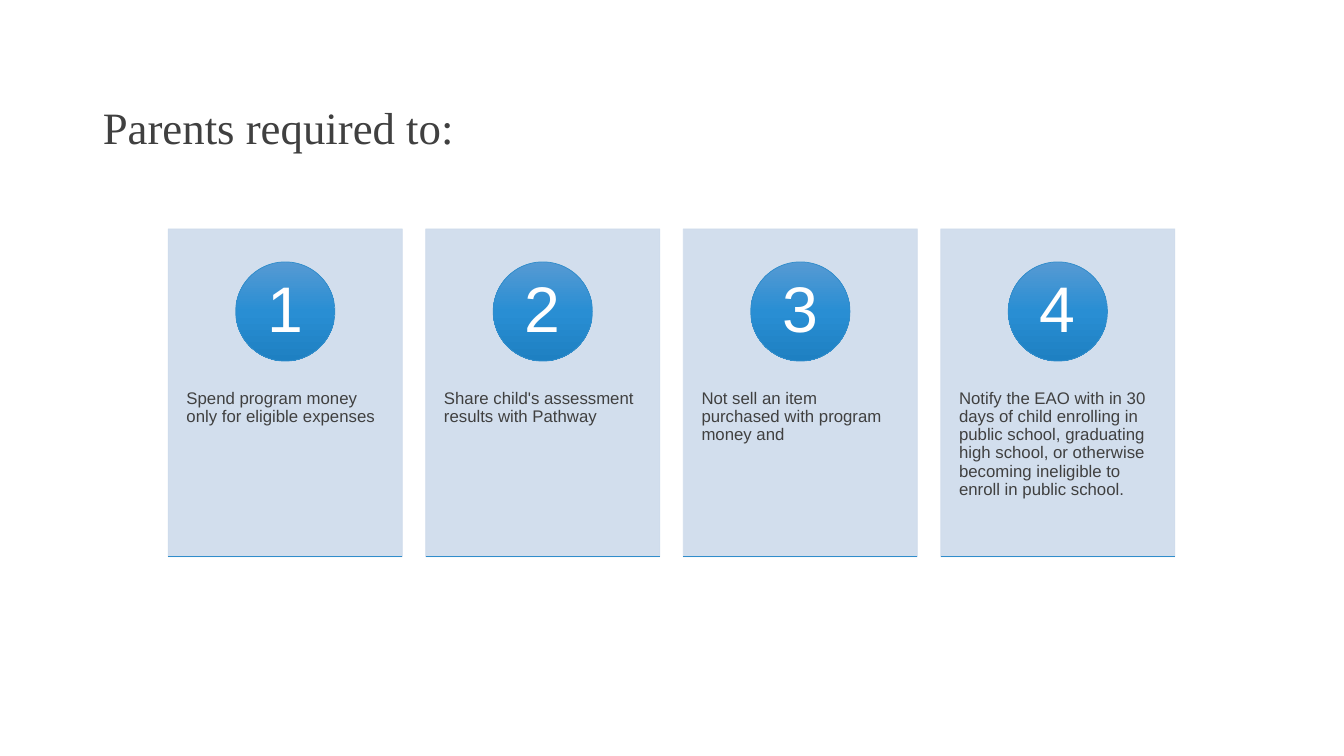
import copy

import pptx
import pptx.dml.color
import pptx.enum.shapes
import pptx.enum.text
import pptx.oxml.ns
import pptx.util
from lxml import etree
from pptx.util import Cm

COLOURS = {
    "text": "404040",
    "card": "CEDBEC",
    "number": "FFFFFF",
    "accent": "318DCB",
    "gradient top": "569AD3",
    "gradient middle": "298ED3",
    "gradient bottom": "1E80C2",
}
DUTIES = [
    "Spend program money only for eligible expenses",
    "Share child's assessment results with Pathway",
    "Not sell an item purchased with program money and",
    "Notify the EAO with in 30 days of child enrolling in public school, "
    "graduating high school, or otherwise becoming ineligible to enroll in public school.",
]
CARD_LEFT, CARD_TOP, CARD_WIDTH, CARD_HEIGHT = 4.24, 5.77, 5.9, 8.26
CARD_STEP = 6.49
CIRCLE_TOP, CIRCLE_SIZE = 6.6, 2.5


class DutySlide:
    """Holds the style and the current slide and adds each kind of element."""

    def __init__(self, presentation):
        self.slide = presentation.slides.add_slide(presentation.slide_layouts[5])

    def colour(self, name):
        return pptx.dml.color.RGBColor.from_string(COLOURS[name])

    def set_text(self, shape, text, font, size, colour, align, anchor, insets):
        frame = shape.text_frame
        frame.text = text
        frame.word_wrap = True
        frame.auto_size = pptx.enum.text.MSO_AUTO_SIZE.NONE
        frame.vertical_anchor = anchor
        frame.margin_left = frame.margin_right = Cm(insets[0])
        frame.margin_top, frame.margin_bottom = Cm(insets[1]), Cm(insets[2])
        paragraph = frame.paragraphs[0]
        paragraph.alignment = align
        paragraph.line_spacing = 0.9
        paragraph.font.name = font
        paragraph.font.size = pptx.util.Pt(size)
        paragraph.font.color.rgb = self.colour(colour)

    def title(self, text):
        title = self.slide.shapes.title
        title.left, title.top, title.width, title.height = Cm(2.34), Cm(1.02), Cm(27.3), Cm(3)
        self.set_text(title, text, "Times New Roman", 32, "text", pptx.enum.text.PP_ALIGN.LEFT,
                      pptx.enum.text.MSO_ANCHOR.BOTTOM, (0.25, 0.13, 0.13))

    def shape(self, kind, left, top, width, height, line):
        shape = self.slide.shapes.add_shape(kind, Cm(left), Cm(top), Cm(width), Cm(height))
        shape.shadow.inherit = False
        shape.line.color.rgb = self.colour(line)
        shape.line.width = pptx.util.Pt(0.5)
        return shape

    def card(self, left, text):
        card = self.shape(pptx.enum.shapes.MSO_SHAPE.RECTANGLE, left, CARD_TOP,
                          CARD_WIDTH, CARD_HEIGHT, "card")
        card.fill.solid()
        card.fill.fore_color.rgb = self.colour("card")
        for colour in card._element.spPr.iter(pptx.oxml.ns.qn("a:srgbClr")):
            etree.SubElement(colour, pptx.oxml.ns.qn("a:alpha"), val="90000")
        self.set_text(card, text, "Arial", 12, "text", pptx.enum.text.PP_ALIGN.LEFT,
                      pptx.enum.text.MSO_ANCHOR.TOP, (0.46, 4.06, 0.91))

    def circle(self, left, number):
        circle = self.shape(pptx.enum.shapes.MSO_SHAPE.OVAL, left, CIRCLE_TOP,
                            CIRCLE_SIZE, CIRCLE_SIZE, "accent")
        circle.fill.gradient()
        circle.fill.gradient_angle = 270
        stop_list = circle._element.spPr.find(".//" + pptx.oxml.ns.qn("a:gsLst"))
        stop_list.append(copy.deepcopy(stop_list[0]))
        names = ("gradient top", "gradient middle", "gradient bottom")
        for index, (stop, name) in enumerate(zip(circle.fill.gradient_stops, names)):
            stop.position = index / 2
            stop.color.rgb = self.colour(name)
        self.set_text(circle, str(number), "Arial", 46, "number", pptx.enum.text.PP_ALIGN.CENTER,
                      pptx.enum.text.MSO_ANCHOR.MIDDLE, (0.2, 0.03, 0.03))

    def rule(self, left, top, width):
        rule = self.slide.shapes.add_connector(pptx.enum.shapes.MSO_CONNECTOR.STRAIGHT,
                                               Cm(left), Cm(top), Cm(left + width), Cm(top))
        rule.line.color.rgb = self.colour("accent")
        rule.line.width = pptx.util.Pt(0.5)
        etree.SubElement(rule._element.spPr, pptx.oxml.ns.qn("a:effectLst"))


def main():
    presentation = pptx.Presentation()
    presentation.slide_width, presentation.slide_height = Cm(33.87), Cm(19.05)
    duty_slide = DutySlide(presentation)
    duty_slide.title("Parents required to:")
    for index, duty in enumerate(DUTIES):
        left = CARD_LEFT + index * CARD_STEP
        duty_slide.card(left, duty)
        duty_slide.circle(left + (CARD_WIDTH - CIRCLE_SIZE) / 2, index + 1)
        duty_slide.rule(left, CARD_TOP + CARD_HEIGHT, CARD_WIDTH)
    presentation.save("out.pptx")


if __name__ == "__main__":
    main()
